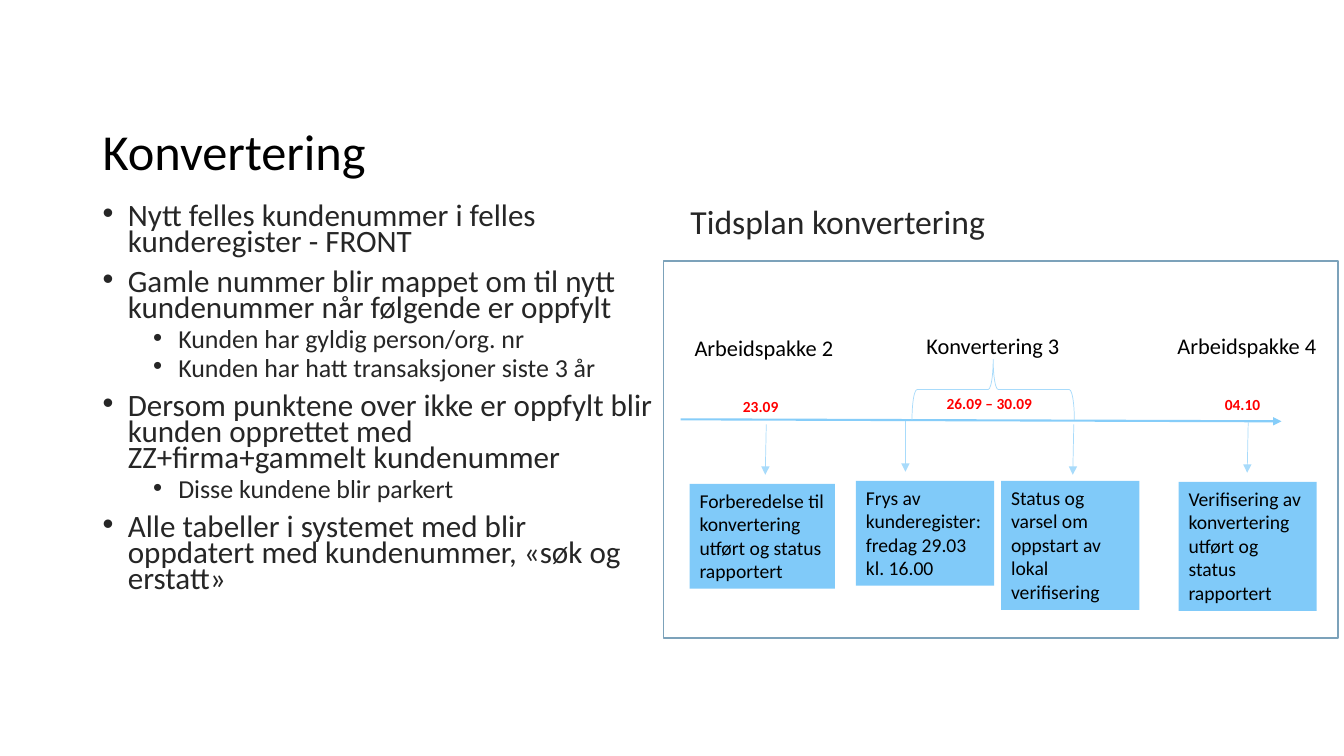
"""Build the slide on customer number conversion with its timeline."""
from pptx import Presentation
from pptx.dml.color import RGBColor
from pptx.enum.shapes import MSO_CONNECTOR, MSO_SHAPE
from pptx.enum.text import MSO_ANCHOR, PP_ALIGN
from pptx.oxml.ns import qn
from pptx.util import Inches, Pt
from lxml import etree

STRAIGHT = MSO_CONNECTOR.STRAIGHT
RECT, BRACE = MSO_SHAPE.RECTANGLE, MSO_SHAPE.LEFT_BRACE
TOP, BOTTOM, LEFT = MSO_ANCHOR.TOP, MSO_ANCHOR.BOTTOM, PP_ALIGN.LEFT
FONT = "Calibri"
COLORS = {
    "white": "FFFFFF", "black": "000000", "gray": "262626", "red": "FF0000",
    "frame": "7CA2BA", "axis": "86CDF9", "pale": "A8DBFB", "box": "80CAF9",
}
POINTS = [
    (0, "Nytt felles kundenummer i felles kunderegister - FRONT"),
    (0, "Gamle nummer blir mappet om til nytt kundenummer når følgende er oppfylt"),
    (1, "Kunden har gyldig person/org. nr"),
    (1, "Kunden har hatt transaksjoner siste 3 år"),
    (0, "Dersom punktene over ikke er oppfylt blir kunden opprettet med "
        "ZZ+firma+gammelt kundenummer"),
    (1, "Disse kundene blir parkert"),
    (0, "Alle tabeller i systemet med blir oppdatert med kundenummer, «søk og erstatt»"),
]
LEVELS = [(22.2, 0.25, 10), (18.5, 0.75, 5)]
PHASES = [
    ("Arbeidspakke 2", 6.79, 3.27, 1.59),
    ("Konvertering 3", 9.09, 3.25, 1.53),
    ("Arbeidspakke 4", 11.58, 3.25, 1.59),
]
DATES = [
    ("23.09", 7.27, 3.89, 0.65),
    ("26.09 – 30.09", 9.29, 3.86, 1.65),
    ("04.10", 12.05, 3.87, 0.65),
]
STEPS = [
    (["Forberedelse til konvertering utført og status rapportert"],
     6.84, 4.8, 1.44, 1.04),
    (["Frys av kunderegister:", "fredag 29.03 kl. 16.00"], 8.49, 4.77, 1.37, 1.04),
    (["Status og varsel om oppstart av lokal verifisering"], 9.93, 4.77, 1.37, 1.28),
    (["Verifisering av konvertering utført og status rapportert"],
     11.69, 4.78, 1.37, 1.28),
]
DROPS = [(7.6, 7.59, 4.21), (8.98, 8.98, 4.18), (10.65, 10.64, 4.21), (12.38, 12.37, 4.19)]
DROP = 0.5


def color(name):
    """Return the named colour."""
    return RGBColor.from_string(COLORS[name])


def style(para, size, tint, bold=False):
    """Set the font of a paragraph."""
    para.alignment = LEFT
    font = para.font
    font.name, font.size, font.bold = FONT, Pt(size), bold
    font.color.rgb = color(tint)


def write(frame, lines, size, tint, bold=False):
    """Fill a text frame with one paragraph a line."""
    frame.word_wrap = True
    for i, line in enumerate(lines):
        para = frame.add_paragraph() if i else frame.paragraphs[0]
        para.text = line
        style(para, size, tint, bold)


def add_text(slide, text, area, size, tint, bold=False, anchor=TOP):
    """Add a text box and return its first paragraph."""
    frame = slide.shapes.add_textbox(*map(Inches, area)).text_frame
    frame.vertical_anchor = anchor
    write(frame, [text], size, tint, bold)
    return frame.paragraphs[0]


def add_list(slide, items, area):
    """Add the bulleted list."""
    frame = slide.shapes.add_textbox(*map(Inches, area)).text_frame
    frame.word_wrap = True
    for i, (level, text) in enumerate(items):
        size, indent, space = LEVELS[level]
        para = frame.add_paragraph() if i else frame.paragraphs[0]
        para.text, para.level = text, level
        para.line_spacing, para.space_before = 0.7, Pt(space)
        props = para._p.get_or_add_pPr()
        props.set("marL", str(Inches(indent)))
        props.set("indent", str(Inches(-0.25)))
        etree.SubElement(props, qn("a:buFont")).set("typeface", "Arial")
        etree.SubElement(props, qn("a:buChar")).set("char", "•")
        style(para, size, "gray")


def add_form(slide, kind, area, fill=None, line=None, width=1):
    """Add a preset shape with optional fill and line."""
    form = slide.shapes.add_shape(kind, *map(Inches, area))
    form.shadow.inherit = False
    if fill:
        form.fill.solid()
        form.fill.fore_color.rgb = color(fill)
    else:
        form.fill.background()
    if line:
        form.line.color.rgb = color(line)
        form.line.width = Pt(width)
    else:
        form.line.fill.background()
    return form


def add_arrow(slide, ends, tint, width):
    """Add a straight arrow."""
    arrow = slide.shapes.add_connector(STRAIGHT, *map(Inches, ends))
    arrow.line.color.rgb = color(tint)
    arrow.line.width = Pt(width)
    etree.SubElement(arrow.line._get_or_add_ln(), qn("a:tailEnd")).set("type", "triangle")
    etree.SubElement(arrow._element.spPr, qn("a:effectLst"))


def add_plan(slide):
    """Draw the timeline inside its frame."""
    add_form(slide, RECT, (6.58, 2.59, 6.69, 3.74), "white", "frame")
    add_arrow(slide, (6.75, 4.16, 12.71, 4.18), "axis", 1.5)
    brace = add_form(slide, BRACE, (9.55, 3.06, 0.6, 1.61), line="pale", width=0.5)
    brace.rotation = 90
    for text, left, top, width in PHASES:
        add_text(slide, text, (left, top, width, 0.37), 16, "black")
    for text, left, top, width in DATES:
        add_text(slide, text, (left, top, width, 0.29), 11, "red", bold=True)
    for start, end, top in DROPS:
        add_arrow(slide, (start, top, end, top + DROP), "pale", 0.5)
    for lines, *area in STEPS:
        box = add_form(slide, RECT, area, "box")
        box.text_frame.vertical_anchor = TOP
        write(box.text_frame, lines, 14, "black")


def main():
    """Build and save the slide."""
    deck = Presentation()
    deck.slide_width, deck.slide_height = Inches(13.33), Inches(7.5)
    slide = deck.slides.add_slide(deck.slide_layouts[6])
    title = add_text(slide, "Konvertering", (0.92, 0.4, 10.7, 1.45), 36, "black",
                     anchor=BOTTOM)
    title.line_spacing = 0.9
    add_list(slide, POINTS, (0.92, 1.99, 5.67, 4.34))
    head = add_text(slide, "Tidsplan konvertering", (6.75, 1.99, 5.67, 0.5), 24, "gray")
    head.line_spacing, head.space_before = 0.9, Pt(10)
    add_plan(slide)
    deck.save("out.pptx")


if __name__ == "__main__":
    main()
